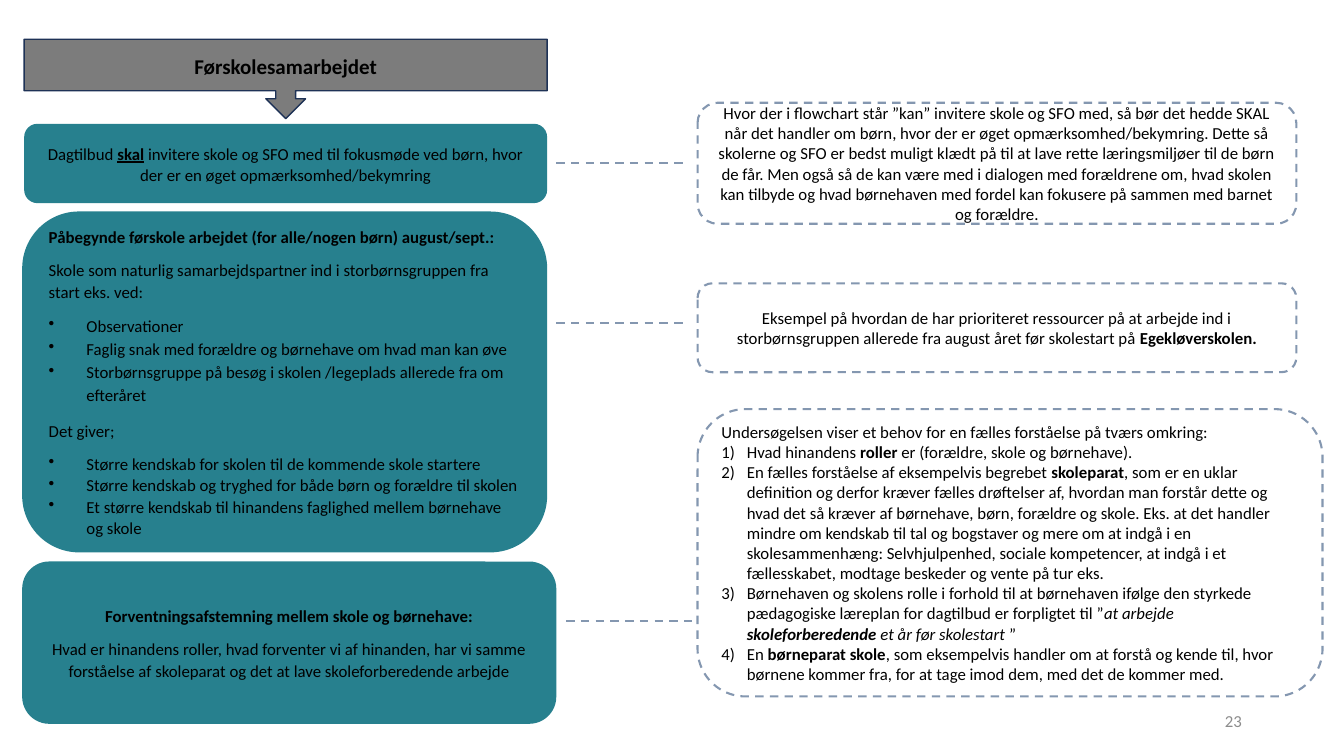
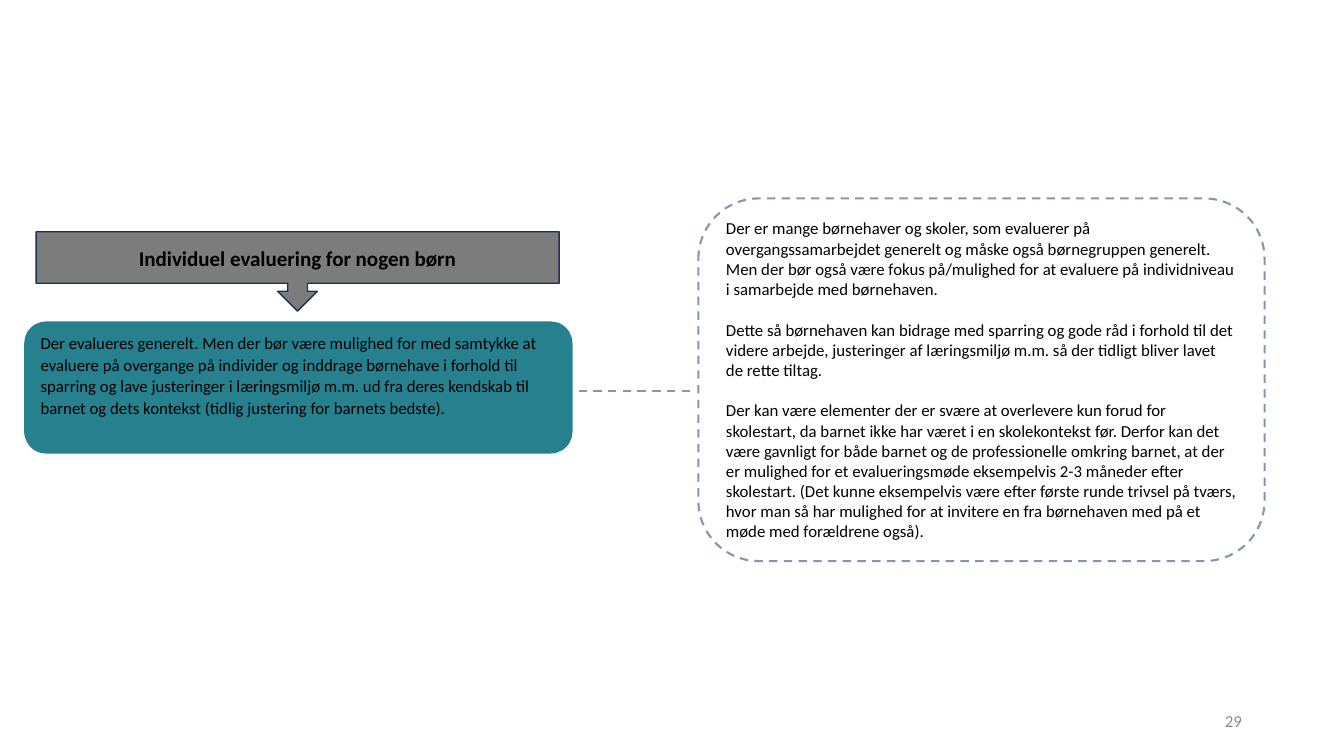
from dataclasses import dataclass

from lxml.etree import SubElement
from pptx import Presentation
from pptx.dml.color import RGBColor
from pptx.enum.dml import MSO_LINE
from pptx.enum.shapes import MSO_CONNECTOR, MSO_SHAPE
from pptx.enum.text import MSO_ANCHOR, PP_ALIGN
from pptx.oxml.ns import qn
from pptx.util import Cm, Pt

TEAL = RGBColor(0x27, 0x80, 0x8E)
GREY = RGBColor(0x7C, 0x7C, 0x7C)
NAVY = RGBColor(0x1E, 0x32, 0x56)
STEEL = RGBColor(0x84, 0x97, 0xB0)
NUMBER_GREY = RGBColor(0x8C, 0x8C, 0x8C)
BLACK = RGBColor(0, 0, 0)
WHITE = RGBColor(0xFF, 0xFF, 0xFF)
FONT = "Calibri"
CENTER, LEFT, RIGHT = PP_ALIGN.CENTER, PP_ALIGN.LEFT, PP_ALIGN.RIGHT

BULLET = ("a:buChar", {"char": "•"}, Cm(0.95))
NUMBER = ("a:buAutoNum", {"type": "arabicParenR"}, Cm(0.64))


@dataclass
class Block:
    """One paragraph; each run is a string or a (text, styles) pair with styles from b, i, u."""
    runs: list
    align: PP_ALIGN = LEFT
    spacing: float = 1.0
    after: float = 0
    marker: tuple = None


def step_text(*runs, align=LEFT, spacing=1.07, after=8, marker=None):
    return Block(runs, align, spacing, after, marker)


def step_bullet(text, spacing=1.07, after=0):
    return step_text(text, spacing=spacing, after=after, marker=BULLET)


def note_text(*runs, align=LEFT, after=0, marker=None):
    return Block(runs, align, 1.0, after, marker)


def set_marker(para, marker):
    tag, attributes, indent = marker
    properties = para._p.get_or_add_pPr()
    properties.set("marL", str(indent))
    properties.set("indent", str(-indent))
    SubElement(properties, qn(tag), attributes)


def write_blocks(shape, blocks, size=12, color=BLACK):
    frame = shape.text_frame
    frame.word_wrap = True
    frame.vertical_anchor = MSO_ANCHOR.MIDDLE
    for index, block in enumerate(blocks):
        para = frame.add_paragraph() if index else frame.paragraphs[0]
        para.alignment = block.align
        para.line_spacing = block.spacing
        para.space_after = Pt(block.after)
        if block.marker:
            set_marker(para, block.marker)
        for run in block.runs:
            text, styles = (run, "") if isinstance(run, str) else run
            span = para.add_run()
            span.text = text
            font = span.font
            font.name, font.size, font.color.rgb = FONT, Pt(size), color
            font.bold, font.italic, font.underline = (key in styles for key in "biu")


def add_panel(page, kind, box, fill):
    panel = page.shapes.add_shape(kind, *map(Cm, box))
    panel.shadow.inherit = False
    panel.fill.solid()
    panel.fill.fore_color.rgb = fill
    return panel


def dash_line(line):
    line.color.rgb = STEEL
    line.width = Pt(1.5)
    line.dash_style = MSO_LINE.DASH


def title_callout(page, left, top, text):
    panel = add_panel(page, MSO_SHAPE.DOWN_ARROW_CALLOUT, (left, top, 13.18, 2), GREY)
    panel.line.color.rgb = NAVY
    panel.line.width = Pt(1)
    write_blocks(panel, [step_text((text, "b"), align=CENTER)], size=15)


def step_box(page, box, blocks):
    panel = add_panel(page, MSO_SHAPE.ROUNDED_RECTANGLE, box, TEAL)
    panel.line.fill.background()
    write_blocks(panel, blocks)
    return panel


def note_box(page, box, blocks):
    panel = add_panel(page, MSO_SHAPE.ROUNDED_RECTANGLE, box, WHITE)
    dash_line(panel.line)
    write_blocks(panel, blocks)


def link(page, start, end, height):
    """Dashed horizontal line from a step to its note."""
    connector = page.shapes.add_connector(
        MSO_CONNECTOR.STRAIGHT, Cm(start), Cm(height), Cm(end), Cm(height))
    dash_line(connector.line)
    SubElement(connector._element.spPr, qn("a:effectLst"))


def page_number(page, number):
    label = page.shapes.add_textbox(Cm(23.93), Cm(17.65), Cm(7.62), Cm(1.02))
    write_blocks(label, [note_text(number, align=RIGHT)], color=NUMBER_GREY)


def preschool_steps(page):
    title_callout(page, 0.61, 0.99, "Førskolesamarbejdet")
    step_box(page, (0.61, 3.12, 13.18, 2), [
        step_text("Dagtilbud ", ("skal", "bu"),
                  " invitere skole og SFO med til fokusmøde ved børn, hvor der er en øget "
                  "opmærksomhed/bekymring", align=CENTER)])
    step_box(page, (0.56, 5.33, 13.23, 8.59), [
        step_text(("Påbegynde førskole arbejdet (for alle/nogen børn) august/sept.:", "b")),
        step_text("Skole som naturlig samarbejdspartner ind i storbørnsgruppen fra start eks. ved:"),
        step_bullet("Observationer", 1.15),
        step_bullet("Faglig snak med forældre og børnehave om hvad man kan øve", 1.15),
        step_bullet("Storbørnsgruppe på besøg i skolen /legeplads allerede fra om efteråret",
                    1.15, 10),
        step_text("Det giver;"),
        step_bullet("Større kendskab for skolen til de kommende skole startere"),
        step_bullet("Større kendskab og tryghed for både børn og forældre til skolen"),
        step_bullet("Et større kendskab til hinandens faglighed mellem børnehave og skole",
                    after=8)])
    step_box(page, (0.56, 14.15, 13.46, 4.09), [
        step_text(("Forventningsafstemning mellem skole og børnehave:", "b"), align=CENTER),
        step_text("Hvad er hinandens roller, hvad forventer vi af hinanden, har vi samme "
                  "forståelse af skoleparat og det at lave skoleforberedende arbejde",
                  align=CENTER)])


def preschool_notes(page):
    left = 17.58
    note_box(page, (left, 2.59, 15.09, 3.05), [
        note_text("Hvor der i flowchart står ”kan” invitere skole og SFO med, så bør det hedde "
                  "SKAL når det handler om børn, hvor der er øget opmærksomhed/bekymring. Dette "
                  "så skolerne og SFO er bedst muligt klædt på til at lave rette læringsmiljøer "
                  "til de børn de får. Men også så de kan være med i dialogen med forældrene om, "
                  "hvad skolen kan tilbyde og hvad børnehaven med fordel kan fokusere på sammen "
                  "med barnet og forældre.", align=CENTER)])
    note_box(page, (left, 7.14, 15.09, 2.24), [
        note_text("Eksempel på hvordan de har prioriteret ressourcer på at arbejde ind i "
                  "storbørnsgruppen allerede fra august året før skolestart på ",
                  ("Egekløverskolen.", "b"), align=CENTER)])
    note_box(page, (left, 10.31, 15.75, 7.24), [
        note_text("Undersøgelsen viser et behov for en fælles forståelse på tværs omkring:"),
        note_text("Hvad hinandens ", ("roller", "b"), " er (forældre, skole og børnehave).",
                  marker=NUMBER),
        note_text("En fælles forståelse af eksempelvis begrebet ", ("skoleparat", "b"),
                  ", som er en uklar definition og derfor kræver fælles drøftelser af, hvordan "
                  "man forstår dette og hvad det så kræver af børnehave, børn, forældre og "
                  "skole. Eks. at det handler mindre om kendskab til tal og bogstaver og mere "
                  "om at indgå i en skolesammenhæng: Selvhjulpenhed, sociale kompetencer, at "
                  "indgå i et fællesskabet, modtage beskeder og vente på tur eks.",
                  marker=NUMBER),
        note_text("Børnehaven og skolens rolle i forhold til at børnehaven ifølge den styrkede "
                  "pædagogiske læreplan for dagtilbud er forpligtet til ”",
                  ("at arbejde ", "i"), ("skoleforberedende", "bi"),
                  (" et år før skolestart ", "i"), "”", marker=NUMBER),
        note_text("En ", ("børneparat skole", "b"),
                  ", som eksempelvis handler om at forstå og kende til, hvor børnene kommer "
                  "fra, for at tage imod dem, med det de kommer med.", marker=NUMBER)])


def preschool_page(page):
    preschool_steps(page)
    preschool_notes(page)
    for start, height in ((14.02, 4.11), (14.02, 8.15), (14.27, 15.65)):
        link(page, start, start + 3.3, height)
    page_number(page, "23")


def evaluation_page(page):
    title_callout(page, 0.91, 5.84, "Individuel evaluering for nogen børn")
    note_box(page, (17.6, 5, 14.27, 9.14), [
        note_text("Der er mange børnehaver og skoler, som evaluerer på overgangssamarbejdet "
                  "generelt og måske også børnegruppen generelt. Men der bør også være fokus "
                  "på/mulighed for at evaluere på individniveau i samarbejde med børnehaven.",
                  after=14.6),
        note_text("Dette så børnehaven kan bidrage med sparring og gode råd i forhold til det "
                  "videre arbejde, justeringer af læringsmiljø m.m. så der tidligt bliver lavet "
                  "de rette tiltag.", after=14.6),
        note_text("Der kan være elementer der er svære at overlevere kun forud for skolestart, "
                  "da barnet ikke har været i en skolekontekst før. Derfor kan det være gavnligt "
                  "for både barnet og de professionelle omkring barnet, at der er mulighed for "
                  "et evalueringsmøde eksempelvis 2-3 måneder efter skolestart. (Det kunne "
                  "eksempelvis være efter første runde trivsel på tværs, hvor man så har "
                  "mulighed for at invitere en fra børnehaven med på et møde med forældrene "
                  "også).")])
    step = step_box(page, (0.61, 8.1, 13.82, 3.33), [
        step_text("Der evalueres generelt. Men der bør være mulighed for med samtykke at "
                  "evaluere på overgange på individer og inddrage børnehave i forhold til "
                  "sparring og lave justeringer i læringsmiljø m.m. ud fra deres kendskab til "
                  "barnet og dets kontekst (tidlig justering for barnets bedste).")])
    step.text_frame.margin_bottom = Cm(0.78)
    link(page, 14.58, 17.42, 9.86)
    page_number(page, "29")


def main():
    deck = Presentation()
    deck.slide_width, deck.slide_height = Cm(33.87), Cm(19.05)
    blank = deck.slide_layouts[6]
    for build_page in (preschool_page, evaluation_page):
        build_page(deck.slides.add_slide(blank))
    deck.save("out.pptx")


if __name__ == "__main__":
    main()
